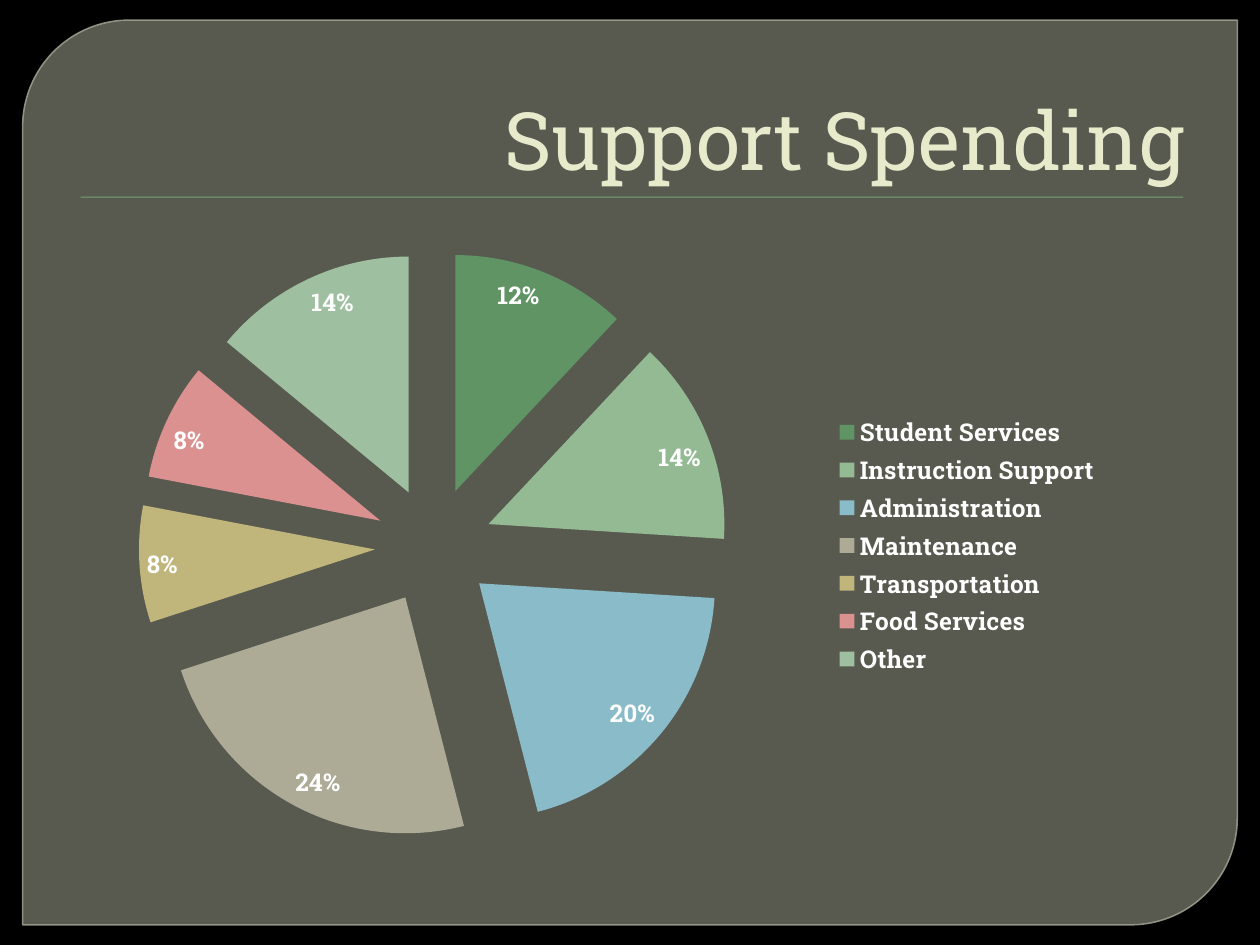
import pptx
import pptx.chart.data
import pptx.dml.color
import pptx.enum.chart
import pptx.enum.shapes
import pptx.enum.text
import pptx.oxml
import pptx.oxml.ns
import pptx.util

Inches = pptx.util.Inches
Pt = pptx.util.Pt
RGBColor = pptx.dml.color.RGBColor

FONT = "Roboto Slab"
BLACK = RGBColor(0x00, 0x00, 0x00)
WHITE = RGBColor(0xFF, 0xFF, 0xFF)
PANEL = RGBColor(0x88, 0x8B, 0x7B)
PANEL_EDGE = RGBColor(0x9D, 0xA0, 0x90)
CREAM = RGBColor(0xE7, 0xEA, 0xCB)
GREEN = RGBColor(0x72, 0xA3, 0x76)
SAGE = RGBColor(0xB0, 0xCC, 0xB0)
BLUE = RGBColor(0xA8, 0xCD, 0xD7)
STONE = RGBColor(0xC0, 0xBE, 0xAF)
SAND = RGBColor(0xCE, 0xC5, 0x97)
ROSE = RGBColor(0xE8, 0xB7, 0xB7)

SHADE, TINT = -0.12, 0.31
# Category, percent, colour, brightness
SPENDING = [
    ("Student Services", 12, GREEN, SHADE),
    ("Instruction Support", 14, SAGE, SHADE),
    ("Administration", 20, BLUE, SHADE),
    ("Maintenance", 24, STONE, SHADE),
    ("Transportation", 8, SAND, SHADE),
    ("Food Services", 8, ROSE, SHADE),
    ("Other", 14, GREEN, TINT),
]


def add_xml(parent, tag, **attributes):
    child = pptx.oxml.parse_xml(f"<{tag} {pptx.oxml.ns.nsdecls(tag.split(':')[0])}/>")
    for name, value in attributes.items():
        child.set(name, str(value))
    parent.append(child)
    return child


def set_alpha(fill, percent):
    """Make a solid fill or line fill partly transparent."""
    color = fill._xPr.find(".//" + pptx.oxml.ns.qn("a:srgbClr"))
    add_xml(color, "a:alpha", val=percent * 1000)


def style_font(font, size, color, bold=False):
    font.name = FONT
    font.size = Pt(size)
    font.bold = bold
    font.color.rgb = color


def add_panel(slide, left, top, width, height):
    panel = slide.shapes.add_shape(
        pptx.enum.shapes.MSO_SHAPE.ROUND_2_DIAG_RECTANGLE, left, top, width, height)
    panel.adjustments[0] = 0.118
    panel.adjustments[1] = 0
    panel.shadow.inherit = False
    panel.fill.solid()
    panel.fill.fore_color.rgb = PANEL
    set_alpha(panel.fill, 65)
    panel.line.width = Pt(0.87)
    panel.line.fill.solid()
    panel.line.color.rgb = PANEL_EDGE
    set_alpha(panel.line.fill, 88)


def add_title_rule(slide, left, top, width, height):
    rule = slide.shapes.add_shape(
        pptx.enum.shapes.MSO_SHAPE.RECTANGLE, left, top, width, height)
    rule.fill.solid()
    rule.fill.fore_color.rgb = GREEN
    rule.line.fill.background()
    # Soft shadow just below the rule
    rule.shadow.inherit = False
    effects = rule._element.spPr.find(pptx.oxml.ns.qn("a:effectLst"))
    shadow = add_xml(effects, "a:outerShdw", blurRad=Pt(1), dist=Pt(1), dir=90 * 60000)
    add_xml(add_xml(shadow, "a:srgbClr", val=BLACK), "a:alpha", val=75000)


def add_title(slide, text, left, top, width, height):
    frame = slide.shapes.add_textbox(left, top, width, height).text_frame
    frame.word_wrap = True
    frame.vertical_anchor = pptx.enum.text.MSO_ANCHOR.BOTTOM
    paragraph = frame.paragraphs[0]
    paragraph.alignment = pptx.enum.text.PP_ALIGN.RIGHT
    run = paragraph.add_run()
    run.text = text
    style_font(run.font, 46, CREAM)


def place_plot(chart, x, y, w, h):
    """Fix the inner plot area as fractions of the chart."""
    plot_area = chart._chartSpace.chart.plotArea
    for old in plot_area.findall(pptx.oxml.ns.qn("c:layout")):
        plot_area.remove(old)
    layout = add_xml(plot_area, "c:layout")
    plot_area.insert(0, layout)
    manual = add_xml(layout, "c:manualLayout")
    settings = [("layoutTarget", "inner"), ("xMode", "edge"), ("yMode", "edge"),
                ("x", x), ("y", y), ("w", w), ("h", h)]
    for name, value in settings:
        add_xml(manual, f"c:{name}", val=value)


def add_spending_pie(slide, left, top, width, height):
    spending = pptx.chart.data.CategoryChartData()
    spending.categories = [row[0] for row in SPENDING]
    spending.add_series("Series 1", [row[1] for row in SPENDING])
    chart = slide.shapes.add_chart(
        pptx.enum.chart.XL_CHART_TYPE.PIE, left, top, width, height, spending).chart
    chart.has_title = False
    style_font(chart.font, 10, WHITE)
    place_plot(chart, 0.011, 0.017, 0.672, 0.967)

    # Legend
    chart.has_legend = True
    chart.legend.position = pptx.enum.chart.XL_LEGEND_POSITION.RIGHT
    chart.legend.include_in_layout = False
    style_font(chart.legend.font, 14, WHITE, bold=True)

    # Exploded slices
    plot = chart.plots[0]
    plot.vary_by_categories = True
    series = plot.series[0]
    for index, (_, _, color, brightness) in enumerate(SPENDING):
        fill = series.points[index].format.fill
        fill.solid()
        fill.fore_color.rgb = color
        fill.fore_color.brightness = brightness
    explosion = add_xml(series._element, "c:explosion", val=25)
    series._element.find(pptx.oxml.ns.qn("c:dPt")).addprevious(explosion)
    for point in series._element.findall(pptx.oxml.ns.qn("c:dPt")):
        slice_explosion = add_xml(point, "c:explosion", val=25)
        point.find(pptx.oxml.ns.qn("c:spPr")).addprevious(slice_explosion)

    # Percent labels
    labels = series.data_labels
    labels.show_value = False
    labels.show_percentage = True
    labels.number_format = "0%"
    labels.number_format_is_linked = False
    labels.position = pptx.enum.chart.XL_LABEL_POSITION.INSIDE_END
    style_font(labels.font, 14, WHITE, bold=True)


def main():
    deck = pptx.Presentation()
    deck.slide_width = Inches(10)
    deck.slide_height = Inches(7.5)
    slide = deck.slides.add_slide(deck.slide_layouts[6])
    slide.background.fill.solid()
    slide.background.fill.fore_color.rgb = BLACK

    add_panel(slide, Inches(0.18), Inches(0.16), Inches(9.64), Inches(7.18))
    add_title_rule(slide, Inches(0.64), Inches(1.56), Inches(8.75), Inches(0.01))
    add_title(slide, "Support Spending",
              Inches(0.5), Inches(0.28), Inches(9), Inches(1.25))
    add_spending_pie(slide, Inches(0.58), Inches(1.91), Inches(8.25), Inches(4.84))
    deck.save("out.pptx")


if __name__ == "__main__":
    main()
